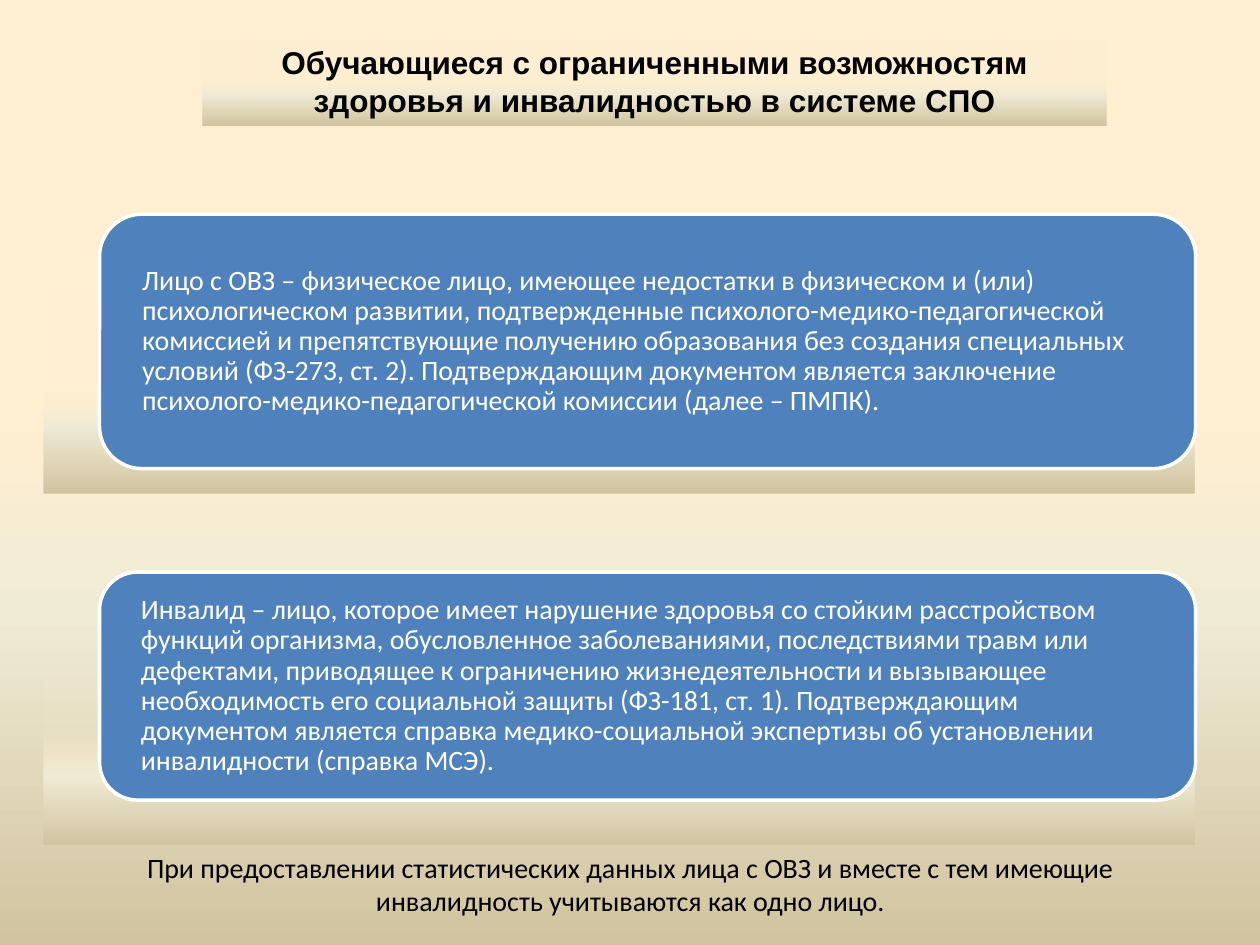
"""Build a slide that defines two groups of students."""
from pptx import Presentation
from pptx.dml.color import RGBColor
from pptx.enum.shapes import MSO_SHAPE
from pptx.enum.text import MSO_ANCHOR, PP_ALIGN
from pptx.oxml.ns import qn
from pptx.util import Pt
from lxml import etree

RECT, ROUND = MSO_SHAPE.RECTANGLE, MSO_SHAPE.ROUNDED_RECTANGLE
TOP, MIDDLE = MSO_ANCHOR.TOP, MSO_ANCHOR.MIDDLE
LEFT, CENTER = PP_ALIGN.LEFT, PP_ALIGN.CENTER

TITLE = "Обучающиеся с ограниченными возможностям здоровья и инвалидностью в системе СПО"
NOTE = ("При предоставлении статистических данных лица с ОВЗ и вместе с тем имеющие "
        "инвалидность учитываются как одно лицо.")
CARDS = [
    {"band": 171.4, "top": 122.4, "height": 145.4, "text": (
        "Лицо с ОВЗ – физическое лицо, имеющее недостатки в физическом и (или) "
        "психологическом развитии, подтвержденные психолого-медико-педагогической "
        "комиссией и препятствующие получению образования без создания специальных "
        "условий (ФЗ-273, ст. 2). Подтверждающим документом является заключение "
        "психолого-медико-педагогической комиссии (далее – ПМПК).")},
    {"band": 371.5, "top": 326.9, "height": 130.3, "text": (
        "Инвалид – лицо, которое имеет нарушение здоровья со стойким расстройством "
        "функций организма, обусловленное заболеваниями, последствиями травм или "
        "дефектами, приводящее к ограничению жизнедеятельности и вызывающее "
        "необходимость его социальной защиты (ФЗ-181, ст. 1). Подтверждающим "
        "документом является справка медико-социальной экспертизы об установлении "
        "инвалидности (справка МСЭ).")},
]
STOPS = [(43, "FFEFD1", 9), (65, "F0EBD5", 100), (100, "D1C39F", 100)]


def color(code):
    return RGBColor.from_string(code)


def add_box(slide, kind, box, fill=None):
    shape = slide.shapes.add_shape(kind, *map(Pt, box))
    shape.shadow.inherit = False
    if fill:
        shape.fill.solid()
        shape.fill.fore_color.rgb = color(fill)
        shape.line.color.rgb = color("FFFFFF")
        shape.line.width = Pt(2)
    else:
        shape.fill.gradient()
        shape.line.fill.background()
    return shape


def write(shape, text, size, ink, face="Calibri", bold=False, align=CENTER, anchor=TOP):
    frame = shape.text_frame
    frame.word_wrap = True
    frame.vertical_anchor = anchor
    para = frame.paragraphs[0]
    para.text = text
    para.alignment = align
    font = para.font
    font.name, font.size, font.bold = face, Pt(size), bold
    font.color.rgb = color(ink)
    return frame


def set_stops(slide):
    for grad in slide.element.iter(qn("a:gradFill")):
        stops = grad.find(qn("a:gsLst"))
        for old in list(stops):
            stops.remove(old)
        solid = grad.getparent().tag == qn("p:bgPr")
        for place, code, alpha in STOPS:
            stop = etree.SubElement(stops, qn("a:gs"), pos=str(place * 1000))
            tint = etree.SubElement(stop, qn("a:srgbClr"), val=code)
            if alpha < 100 and not solid:
                etree.SubElement(tint, qn("a:alpha"), val=str(alpha * 1000))
        grad.find(qn("a:lin")).set("ang", "5400000")


def main():
    deck = Presentation()
    deck.slide_width, deck.slide_height = Pt(720), Pt(540)
    slide = deck.slides.add_slide(deck.slide_layouts[6])
    slide.background.fill.gradient()

    title = add_box(slide, RECT, (116, 20.9, 516.2, 51))
    write(title, TITLE, 18, "000000", "Arial", True)

    for card in CARDS:
        add_box(slide, RECT, (25.2, card["band"], 657.4, 110.9))
        panel = add_box(slide, ROUND, (56.9, card["top"], 626.4, card["height"]), "4F81BD")
        frame = write(panel, card["text"], 16, "FFFFFF", align=LEFT, anchor=MIDDLE)
        frame.margin_left = frame.margin_right = Pt(17.3)
        frame.margin_top = frame.margin_bottom = 0
        frame.paragraphs[0].line_spacing = 0.9

    note = slide.shapes.add_textbox(Pt(37.4), Pt(482.4), Pt(645.8), Pt(67.7))
    write(note, NOTE, 16, "000000")
    set_stops(slide)
    deck.save("out.pptx")


if __name__ == "__main__":
    main()
